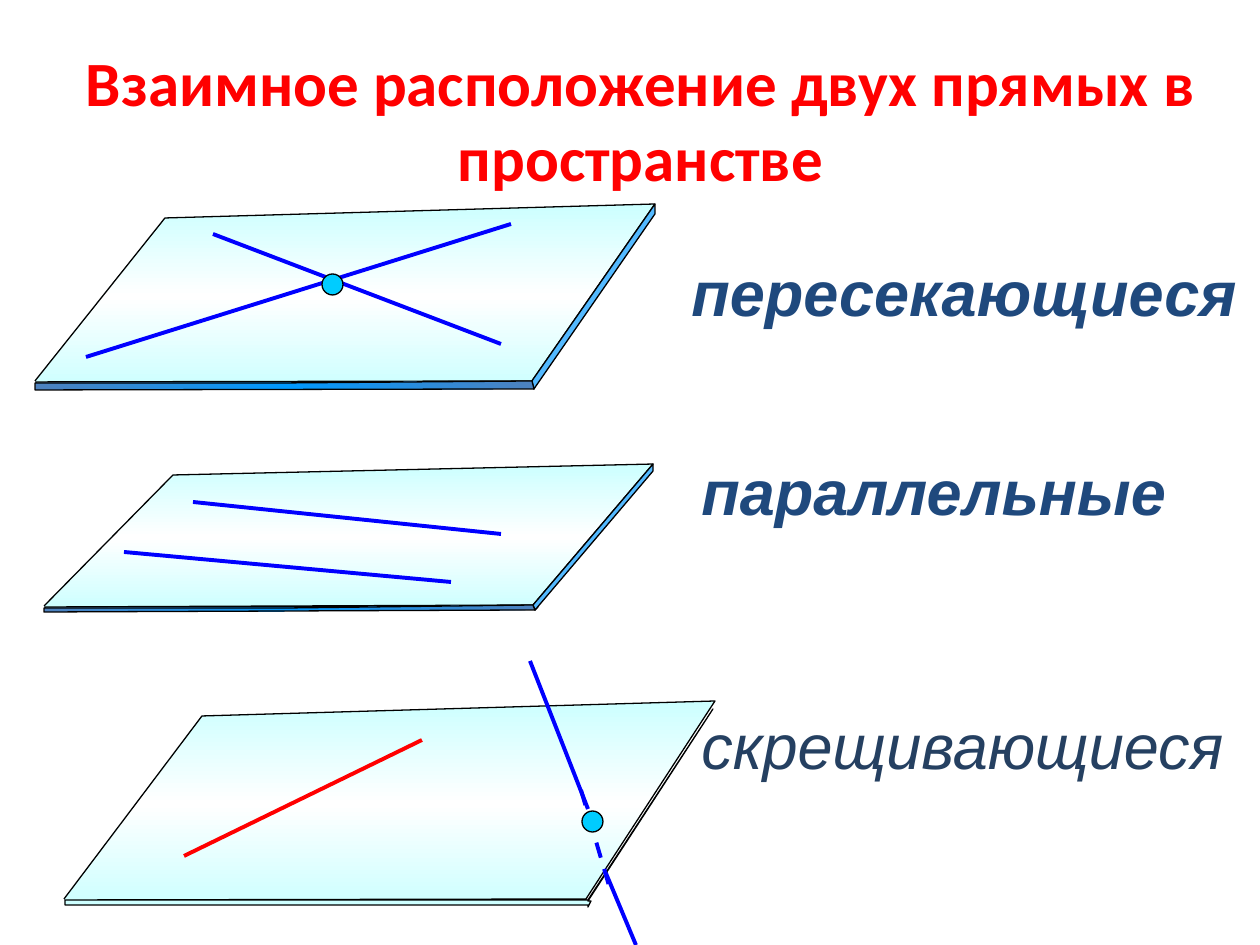
from dataclasses import dataclass

from lxml.etree import SubElement
from pptx import Presentation
from pptx.dml.color import RGBColor
from pptx.enum.dml import MSO_LINE
from pptx.enum.shapes import MSO_CONNECTOR, MSO_SHAPE
from pptx.enum.text import PP_ALIGN
from pptx.oxml.ns import qn
from pptx.util import Pt

PX = 914400 / 126  # EMU in one px


def emu(*lengths):
    return [round(v * PX) for v in lengths]


@dataclass(frozen=True)
class Theme:
    title: str = "FF0000"
    label: str = "1F497D"
    label_dark: str = "254061"
    line: str = "0000FF"
    skew: str = "FF0000"
    dot: str = "00CCFF"
    outline: str = "000000"
    side: str = "53B9FF"
    top: tuple = ("CCFFFF", "FFFFFF", "CCFFFF")
    front: tuple = ("4F81BD", "0099FF", "4F81BD")
    size: int = 36
    thin: float = 0.75
    thick: float = 2.25


def write_text(tf, text, *, size, color, font="Arial", bold=False, italic=True,
               align=PP_ALIGN.LEFT):
    tf.word_wrap = True
    p = tf.paragraphs[0]
    p.alignment = align
    r = p.add_run()
    r.text = text
    r.font.name = font
    r.font.size = Pt(size)
    r.font.bold = bold
    r.font.italic = italic
    r.font.color.rgb = RGBColor.from_string(color)


class Drawing:
    def __init__(self, s, theme):
        self.s = s
        self.theme = theme

    def text(self, box, text, **fmt):
        tb = self.s.shapes.add_textbox(*emu(*box))
        write_text(tb.text_frame, text, size=self.theme.size, **fmt)

    def line(self, x1, y1, x2, y2, color=None, dash=False):
        c = self.s.shapes.add_connector(MSO_CONNECTOR.STRAIGHT, *emu(x1, y1, x2, y2))
        c.line.color.rgb = RGBColor.from_string(color or self.theme.line)
        c.line.width = Pt(self.theme.thick)
        if dash:
            c.line.dash_style = MSO_LINE.DASH
        SubElement(c._element.spPr, qn("a:effectLst"))

    def finish(self, sp, fill, angle=90):
        """Thin outline and a solid colour or an even three-stop gradient."""
        sp.shadow.inherit = False
        sp.line.color.rgb = RGBColor.from_string(self.theme.outline)
        sp.line.width = Pt(self.theme.thin)
        if isinstance(fill, str):
            sp.fill.solid()
            sp.fill.fore_color.rgb = RGBColor.from_string(fill)
            return
        sp.fill.gradient()
        sp.fill.gradient_angle = angle
        stops = sp._element.spPr.find(qn("a:gradFill")).find(qn("a:gsLst"))
        for old in list(stops):
            stops.remove(old)
        for i, color in enumerate(fill):
            gs = SubElement(stops, qn("a:gs"), pos=str(i * 50000))
            SubElement(gs, qn("a:srgbClr"), val=color)

    def dot(self, x, y, d=21):
        sp = self.s.shapes.add_shape(MSO_SHAPE.OVAL, *emu(x, y, d, d))
        self.finish(sp, self.theme.dot)

    def outline(self, points, fill, close=True, angle=90):
        fb = self.s.shapes.build_freeform(*points[0], scale=PX)
        fb.add_line_segments(points[1:], close=close)
        self.finish(fb.convert_to_shape(), fill, angle)

    def slab(self, a, b, c, d, depth, faces=True):
        """Plane with corners front left, back left, back right, front right."""
        (ax, ay), (cx, cy), (dx, dy) = a, c, d
        inner = (ax + 1, ay + 1)
        self.outline([a, b, c, d, inner, (ax + 1, ay + depth - 2),
                      (dx + 2, dy + depth - 2), (dx + 2, dy + depth),
                      (dx + 5, dy + 2), (dx + 2, dy + 2), (cx - 2, cy + depth),
                      (dx + 2, dy + 1), inner], self.theme.top, close=False)
        if not faces:
            return
        corner = (dx + 2, dy + depth)
        self.outline([c, (cx, cy + depth + 2), corner, d], self.theme.side)
        self.outline([(ax, ay + 2), ((ax + dx) // 2, ay + 2), d, corner,
                      (ax, ay + depth + 1)], self.theme.front, angle=45)


def main():
    theme = Theme()
    prs = Presentation()
    prs.slide_width, prs.slide_height = emu(1260, 945)
    draw = Drawing(prs.slides.add_slide(prs.slide_layouts[6]), theme)

    # Title
    draw.text((21, 37, 1239, 165), "Взаимное расположение двух прямых в пространстве",
              color=theme.title, font="Calibri", bold=True, italic=False,
              align=PP_ALIGN.CENTER)

    # Intersecting lines
    draw.slab((35, 381), (165, 218), (655, 204), (532, 381), depth=8)
    draw.line(511, 224, 86, 357)
    draw.line(501, 344, 213, 234)
    draw.dot(322, 274)
    draw.text((679, 247, 581, 89), "пересекающиеся", color=theme.label, bold=True)

    # Parallel lines
    draw.slab((44, 606), (173, 475), (653, 464), (533, 605), depth=5)
    draw.line(451, 582, 124, 552)
    draw.line(501, 534, 193, 502)
    draw.text((689, 446, 536, 89), "параллельные", color=theme.label, bold=True)

    # Skew lines: the lower part of the piercing line lies behind the plane
    draw.line(600, 859, 636, 945)
    draw.slab((64, 899), (202, 716), (715, 701), (586, 899), depth=8, faces=False)
    draw.line(184, 856, 422, 740, color=theme.skew)
    draw.line(581, 790, 610, 889, dash=True)
    draw.line(530, 661, 588, 809)
    draw.dot(582, 811)
    draw.text((689, 700, 571, 89), "скрещивающиеся", color=theme.label_dark)

    prs.save("out.pptx")


if __name__ == "__main__":
    main()
